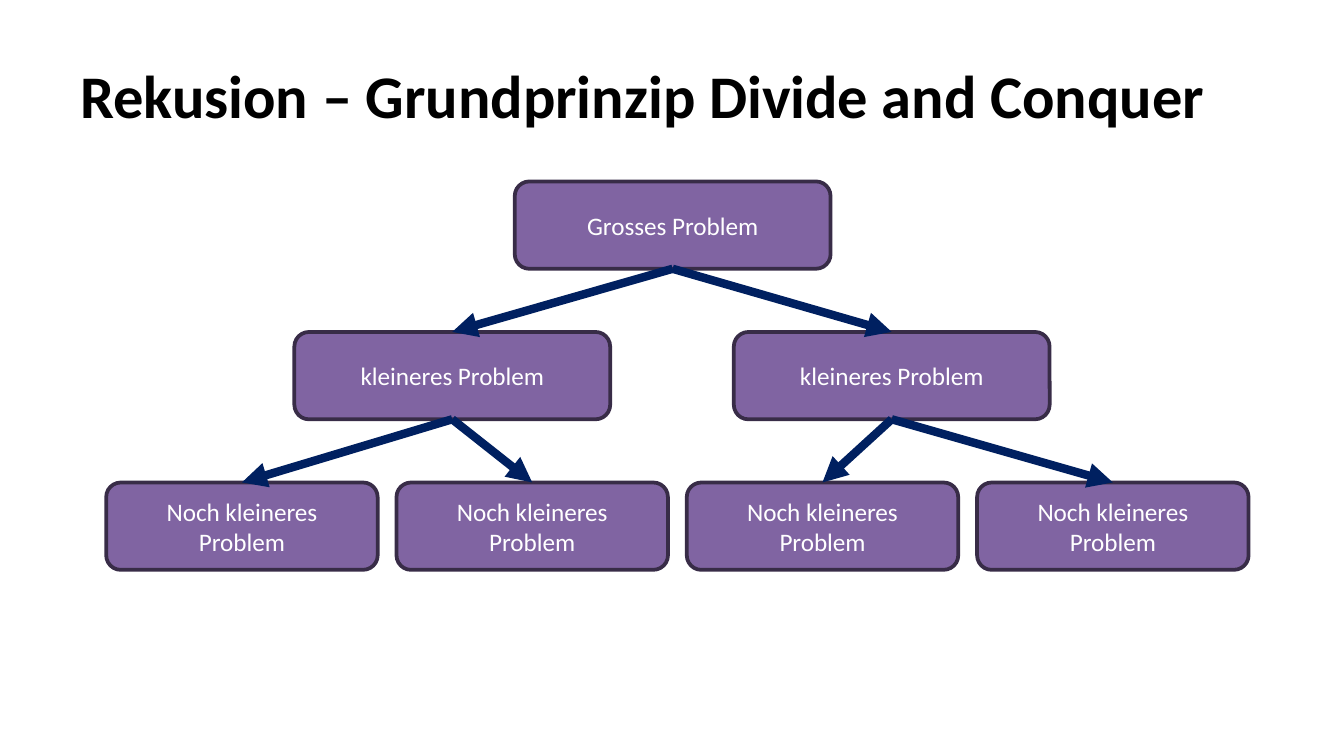
from lxml import etree
from pptx import Presentation
from pptx.dml.color import RGBColor
from pptx.enum.shapes import MSO_CONNECTOR, MSO_SHAPE
from pptx.enum.text import MSO_ANCHOR, PP_ALIGN
from pptx.oxml.ns import qn
from pptx.util import Inches, Pt

ROUNDED = MSO_SHAPE.ROUNDED_RECTANGLE
STRAIGHT = MSO_CONNECTOR.STRAIGHT
MIDDLE = MSO_ANCHOR.MIDDLE
LEFT = PP_ALIGN.LEFT
CENTER = PP_ALIGN.CENTER

BLACK = RGBColor(0x00, 0x00, 0x00)
WHITE = RGBColor(0xFF, 0xFF, 0xFF)
PURPLE = RGBColor(0x80, 0x64, 0xA2)
DARK_PURPLE = RGBColor(0x38, 0x2C, 0x47)
NAVY = RGBColor(0x00, 0x20, 0x60)

SLIDE_WIDTH = Inches(10)
SLIDE_HEIGHT = SLIDE_WIDTH * 9 // 16
TOP_SITE, BOTTOM_SITE = 0, 2
BOX_HEIGHT = 0.65
FIRST_TOP, LEVEL_STEP = 1.35, 1.12
LEVELS = [
    ("Grosses Problem", 3.83, 2.35, 0),
    ("kleineres Problem", 2.19, 2.35, 3.27),
    ("Noch kleineres Problem", 0.79, 2.02, 2.16),
]


def write_text(shape, text, *, size, color, bold=False, align=LEFT, font="Calibri"):
    frame = shape.text_frame
    frame.word_wrap = True
    frame.vertical_anchor = MIDDLE
    paragraph = frame.paragraphs[0]
    paragraph.alignment = align
    run = paragraph.add_run()
    run.text = text
    run.font.name = font
    run.font.size = Pt(size)
    run.font.bold = bold
    run.font.color.rgb = color


class TreeSlide:
    def __init__(self, slide):
        self.slide = slide
        self.box_fill = PURPLE
        self.box_line = DARK_PURPLE
        self.arrow_color = NAVY

    def title(self, text):
        shape = self.slide.shapes.add_textbox(
            Inches(0.5), Inches(0.23), Inches(9), Inches(0.94)
        )
        write_text(shape, text, size=32.4, color=BLACK, bold=True)

    def box(self, text, left, top, width):
        shape = self.slide.shapes.add_shape(
            ROUNDED, Inches(left), Inches(top), Inches(width), Inches(BOX_HEIGHT)
        )
        shape.shadow.inherit = False
        shape.fill.solid()
        shape.fill.fore_color.rgb = self.box_fill
        shape.line.color.rgb = self.box_line
        shape.line.width = Pt(2)
        write_text(shape, text, size=13.5, color=WHITE, align=CENTER)
        return shape

    def arrow(self, parent, child):
        connector = self.slide.shapes.add_connector(STRAIGHT, 0, 0, 0, 0)
        connector.begin_connect(parent, BOTTOM_SITE)
        connector.end_connect(child, TOP_SITE)
        connector.line.color.rgb = self.arrow_color
        connector.line.width = Pt(4.5)
        properties = connector.element.spPr
        line = properties.find(qn("a:ln"))
        etree.SubElement(line, qn("a:tailEnd"), type="triangle")
        etree.SubElement(properties, qn("a:effectLst"))


def main():
    presentation = Presentation()
    presentation.slide_width = SLIDE_WIDTH
    presentation.slide_height = SLIDE_HEIGHT
    tree = TreeSlide(presentation.slides.add_slide(presentation.slide_layouts[6]))
    tree.title("Rekusion – Grundprinzip Divide and Conquer")

    levels = [
        [
            tree.box(text, left + column * step, FIRST_TOP + depth * LEVEL_STEP, width)
            for column in range(2**depth)
        ]
        for depth, (text, left, width, step) in enumerate(LEVELS)
    ]
    for parents, children in zip(levels, levels[1:]):
        for index, child in enumerate(children):
            tree.arrow(parents[index // 2], child)

    presentation.save("out.pptx")


if __name__ == "__main__":
    main()
